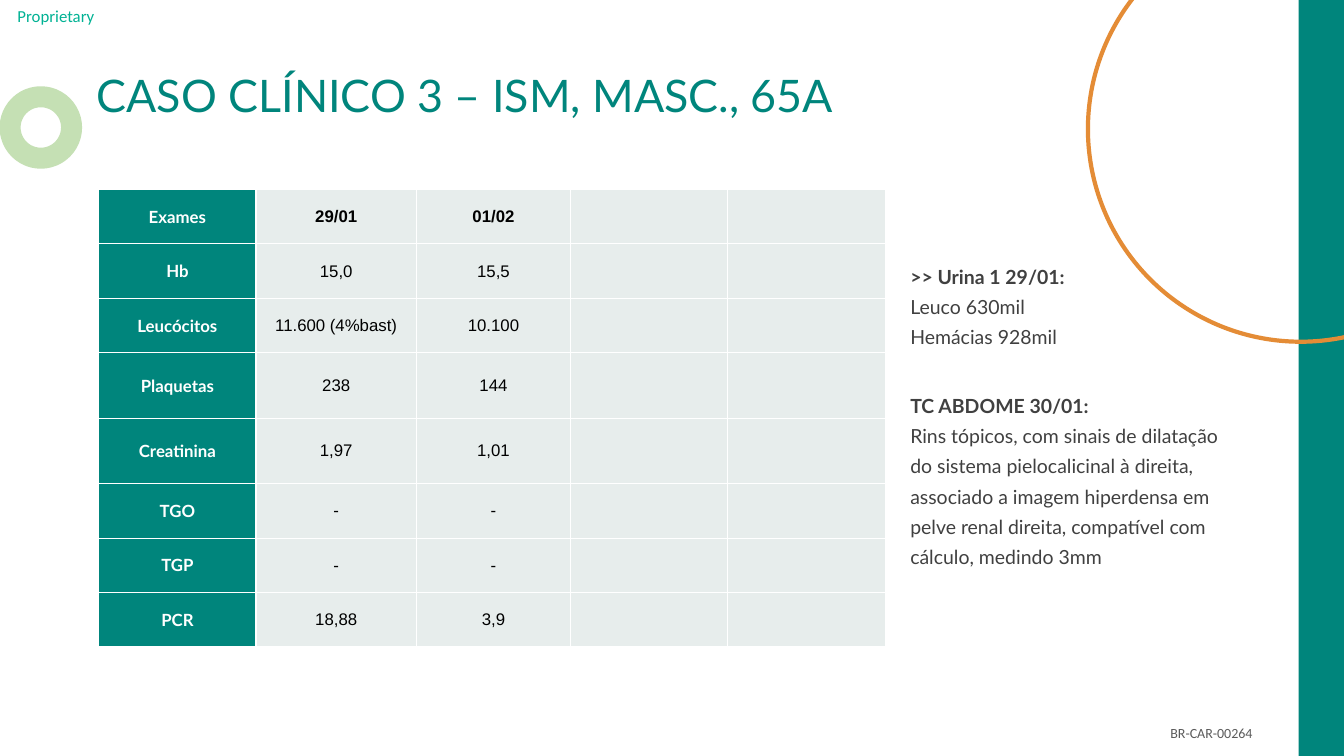
from pptx import Presentation
from pptx.dml.color import RGBColor
from pptx.enum.shapes import MSO_SHAPE
from pptx.enum.text import MSO_ANCHOR, PP_ALIGN
from pptx.oxml import parse_xml
from pptx.oxml.ns import nsdecls
from pptx.util import Inches, Pt

RECT, OVAL = MSO_SHAPE.RECTANGLE, MSO_SHAPE.OVAL
LEFT, CENTER = PP_ALIGN.LEFT, PP_ALIGN.CENTER
TOP, MIDDLE = MSO_ANCHOR.TOP, MSO_ANCHOR.MIDDLE

COLORS = {
    "teal": "00857C", "mint": "00B294", "leaf": "C5E0B4", "orange": "E48C36",
    "gray": "5B5B5B", "dark": "404040", "pale": "E7EDEC",
    "white": "FFFFFF", "black": "000000",
}
WIDTHS = [1.56, 1.59, 1.53, 1.56, 1.56]
HEIGHTS = [0.54, 0.54, 0.54, 0.65, 0.65, 0.54, 0.54, 0.54]
EXAMS = [
    ("Exames", "29/01", "01/02"),
    ("Hb", "15,0", "15,5"),
    ("Leucócitos", "11.600 (4%bast)", "10.100"),
    ("Plaquetas", "238", "144"),
    ("Creatinina", "1,97", "1,01"),
    ("TGO", "-", "-"),
    ("TGP", "-", "-"),
    ("PCR", "18,88", "3,9"),
]
NOTES = [
    (">> Urina 1 29/01:", True, 0),
    ("Leuco 630mil", False, 0),
    ("Hemácias 928mil", False, 0),
    ("TC ABDOME 30/01:", True, 27),
    ("Rins tópicos, com sinais de dilatação do sistema pielocalicinal à direita, "
     "associado a imagem hiperdensa em pelve renal direita, compatível com "
     "cálculo, medindo 3mm", False, 0),
]


def color(name):
    """Return the named palette colour."""
    return RGBColor.from_string(COLORS[name])


def write(para, text, size=12, font="Lato", tint="dark", bold=False,
          align=LEFT, line=None, before=0):
    """Write one formatted run into a paragraph."""
    para.alignment = align
    if line:
        para.line_spacing = line
    if before:
        para.space_before = Pt(before)
    run = para.add_run()
    run.text = text
    run.font.size, run.font.name, run.font.bold = Pt(size), font, bold
    run.font.color.rgb = color(tint)


def frame(slide, box, anchor=TOP, wrap=True, inset=None):
    """Add a text box and return its text frame."""
    body = slide.shapes.add_textbox(*map(Inches, box)).text_frame
    body.word_wrap, body.vertical_anchor = wrap, anchor
    if inset is not None:
        body.margin_left = body.margin_right = Inches(inset)
        body.margin_top = body.margin_bottom = Inches(inset)
    return body


def shape(slide, kind, box, fill=None, line=None, width=0):
    """Add a plain shape with an optional fill and outline."""
    item = slide.shapes.add_shape(kind, *map(Inches, box))
    item.shadow.inherit = False
    if fill:
        item.fill.solid()
        item.fill.fore_color.rgb = color(fill)
    else:
        item.fill.background()
    if line:
        item.line.color.rgb = color(line)
        item.line.width = Pt(width)
    else:
        item.line.fill.background()


def border(cell):
    """Draw thin white lines on all sides of a cell."""
    props = cell._tc.get_or_add_tcPr()
    for spot, side in enumerate(("lnL", "lnR", "lnT", "lnB")):
        props.insert(spot, parse_xml(
            f'<a:{side} {nsdecls("a")} w="{Pt(1)}"><a:solidFill>'
            f'<a:srgbClr val="{COLORS["white"]}"/></a:solidFill></a:{side}>'))


def decor(slide, width, height):
    """Place the side band, ring and large circle."""
    band = 0.45
    shape(slide, RECT, (width - band, 0, band, height), fill="teal")
    shape(slide, OVAL, (0.1, 0.96, 0.61, 0.61), line="leaf", width=15)
    shape(slide, OVAL, (10.79, -0.83, 4.22, 4.22), line="orange", width=3)


def labels(slide):
    """Place the title and the two corner labels."""
    mark = frame(slide, (0, 0, 1.11, 0.32), MIDDLE, False, 0)
    write(mark.paragraphs[0], "Proprietary", font="Calibri", tint="mint",
          align=CENTER)
    code = frame(slide, (11.51, 7.14, 1.2, 0.27))
    write(code.paragraphs[0], "BR-CAR-00264", size=10, font="Calibri", tint="gray")
    title = frame(slide, (0.86, 0.67, 11.26, 0.61), MIDDLE)
    write(title.paragraphs[0], "CASO CLÍNICO 3 – ISM, MASC., 65A", size=32,
          tint="teal", line=0.9)


def exams(slide, left, top):
    """Build the exam table from its top left corner."""
    box = (left, top, sum(WIDTHS), sum(HEIGHTS))
    grid = slide.shapes.add_table(len(HEIGHTS), len(WIDTHS),
                                  *map(Inches, box)).table
    grid.first_row = grid.horz_banding = False
    for col, width in zip(grid.columns, WIDTHS):
        col.width = Inches(width)
    for row, height in zip(grid.rows, HEIGHTS):
        row.height = Inches(height)
    for r in range(len(HEIGHTS)):
        for c in range(len(WIDTHS)):
            cell, head = grid.cell(r, c), c == 0
            cell.fill.solid()
            cell.fill.fore_color.rgb = color("teal" if head else "pale")
            border(cell)
            if c >= len(EXAMS[r]):
                continue
            cell.vertical_anchor = MIDDLE
            roomy = head or r < 2
            cell.margin_left = cell.margin_right = Inches(0.1 if roomy else 0.03)
            cell.margin_top = cell.margin_bottom = Inches(0.1 if roomy else 0.02)
            write(cell.text_frame.paragraphs[0], EXAMS[r][c],
                  font="Lato" if head else "Arial",
                  tint="white" if head else "black",
                  bold=head or r == 0, align=CENTER)


def notes(slide, box):
    """Write the urine and scan findings in a box."""
    body = frame(slide, box)
    for i, (text, bold, before) in enumerate(NOTES):
        para = body.add_paragraph() if i else body.paragraphs[0]
        write(para, text, size=13.9, bold=bold, line=1.3, before=before)


def main():
    """Build and save the slide."""
    deck = Presentation()
    width, height = 13.33, 7.5
    deck.slide_width, deck.slide_height = Inches(width), Inches(height)
    slide = deck.slides.add_slide(deck.slide_layouts[6])
    decor(slide, width, height)
    labels(slide)
    exams(slide, 0.98, 1.88)
    notes(slide, (8.93, 2.51, 3.5, 3.27))
    deck.save("out.pptx")


if __name__ == "__main__":
    main()
